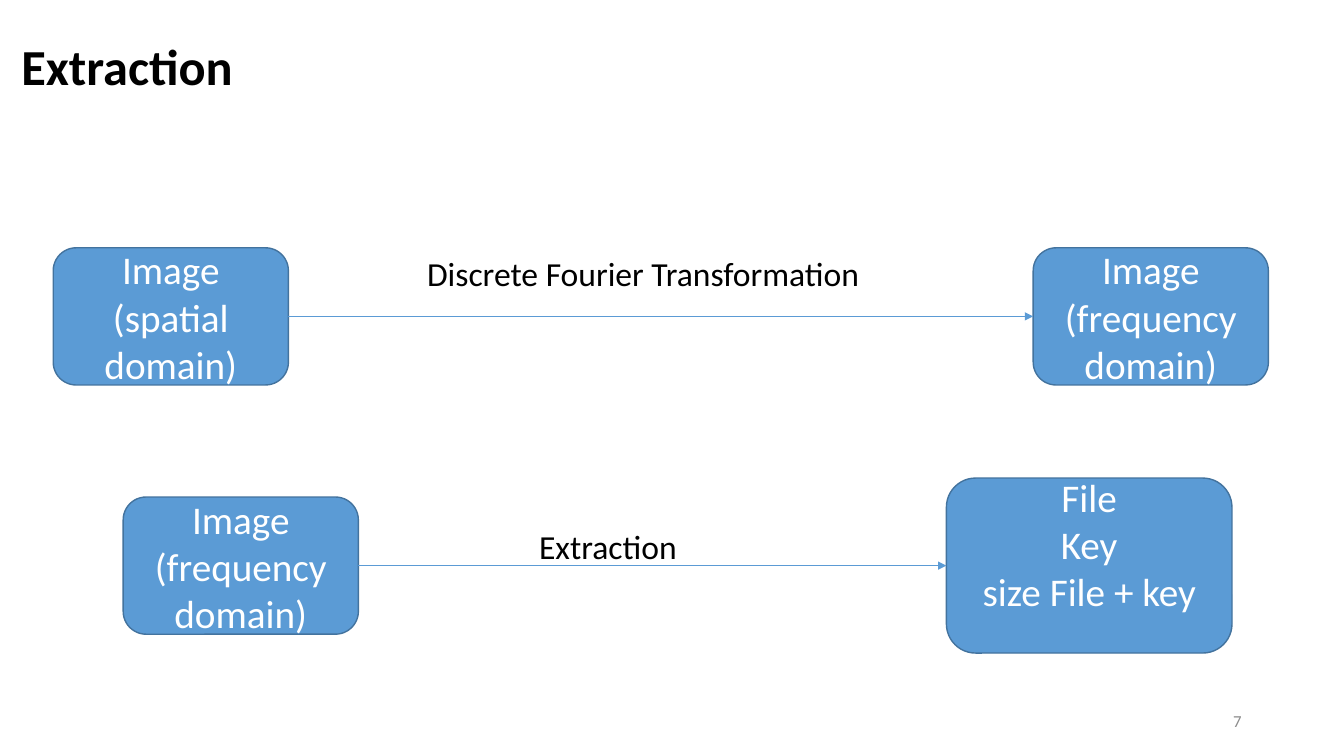
from pptx import Presentation
from pptx.dml.color import RGBColor
from pptx.enum.shapes import MSO_CONNECTOR as Link, MSO_SHAPE as Shape
from pptx.enum.text import MSO_ANCHOR as Anchor, PP_ALIGN as Align
from pptx.oxml.ns import qn
from pptx.util import Pt
from lxml.etree import SubElement

# Content: lengths in points
TITLE = ("Extraction", (8, 9.5, 828, 104.5))
PAGE_NUMBER = ("7", (678, 500.5, 216, 28.5))
SMALL, LARGE = (168, 98), (204, 125)
FREQUENCY = ["Image", "(frequency domain)"]
# Each step: centre height, (left, size, lines, bottom inset) twice, label, label box
STEPS = [
    (226, (38, SMALL, ["Image", "(spatial domain)"], 3.6),
     (738, SMALL, FREQUENCY, 3.6),
     "Discrete Fourier Transformation", (298, 177, 377, 36)),
    (404, (88, SMALL, FREQUENCY, 3.6),
     (676, LARGE, ["File", "Key", "size File + key"], 34),
     "Extraction", (378, 372, 335, 36)),
]
BLUE, EDGE, WHITE, BLACK, GREY = "5B9BD5", "43739E", "FFFFFF", "000000", "8C8C8C"


def color(value):
    return RGBColor.from_string(value)


def write(shape, lines, size, ink, align, anchor, bold=False, bottom=3.6):
    frame = shape.text_frame
    frame.text = "\n".join(lines)
    layout = {"word_wrap": True, "vertical_anchor": anchor, "margin_bottom": Pt(bottom)}
    for name, value in layout.items():
        setattr(frame, name, value)
    for para in frame.paragraphs:
        para.alignment = align
        for span in para.runs:
            for name, value in {"name": "Calibri", "size": Pt(size), "bold": bold}.items():
                setattr(span.font, name, value)
            span.font.color.rgb = color(ink)


def add_text(page, text, box, *style):
    write(page.shapes.add_textbox(*map(Pt, box)), [text], *style)


def add_block(page, middle, left, size, lines, bottom):
    width, height = size
    box = page.shapes.add_shape(Shape.ROUNDED_RECTANGLE, Pt(left),
                                Pt(middle - height / 2), Pt(width), Pt(height))
    box.shadow.inherit = False
    box.fill.solid()
    box.fill.fore_color.rgb = color(BLUE)
    box.line.color.rgb = color(EDGE)
    box.line.width = Pt(1)
    write(box, lines, 28, WHITE, Align.CENTER, Anchor.MIDDLE, bottom=bottom)
    return box


def add_arrow(page, source, target):
    arrow = page.shapes.add_connector(Link.STRAIGHT, 0, 0, 0, 0)
    arrow.begin_connect(source, 3)
    arrow.end_connect(target, 1)
    arrow.line.color.rgb = color(BLUE)
    arrow.line.width = Pt(0.5)
    SubElement(arrow.line._get_or_add_ln(), qn("a:tailEnd"), type="triangle")
    SubElement(arrow._element.spPr, qn("a:effectLst"))


def main():
    deck = Presentation()
    deck.slide_width, deck.slide_height = Pt(960), Pt(540)
    page = deck.slides.add_slide(deck.slide_layouts[5])

    # Title and page number
    text, box = TITLE
    title = page.shapes.title
    for name, value in zip(("left", "top", "width", "height"), box):
        setattr(title, name, Pt(value))
    write(title, [text], 36, BLACK, Align.LEFT, Anchor.MIDDLE, bold=True, bottom=28)
    title.text_frame.paragraphs[0].line_spacing = 0.9
    add_text(page, *PAGE_NUMBER, 12, GREY, Align.RIGHT, Anchor.MIDDLE)

    # Steps: two blocks, an arrow and its label
    for middle, start, end, label, label_box in STEPS:
        source = add_block(page, middle, *start)
        target = add_block(page, middle, *end)
        add_arrow(page, source, target)
        add_text(page, label, label_box, 24, BLACK, Align.LEFT, Anchor.TOP)

    deck.save("out.pptx")


if __name__ == "__main__":
    main()
